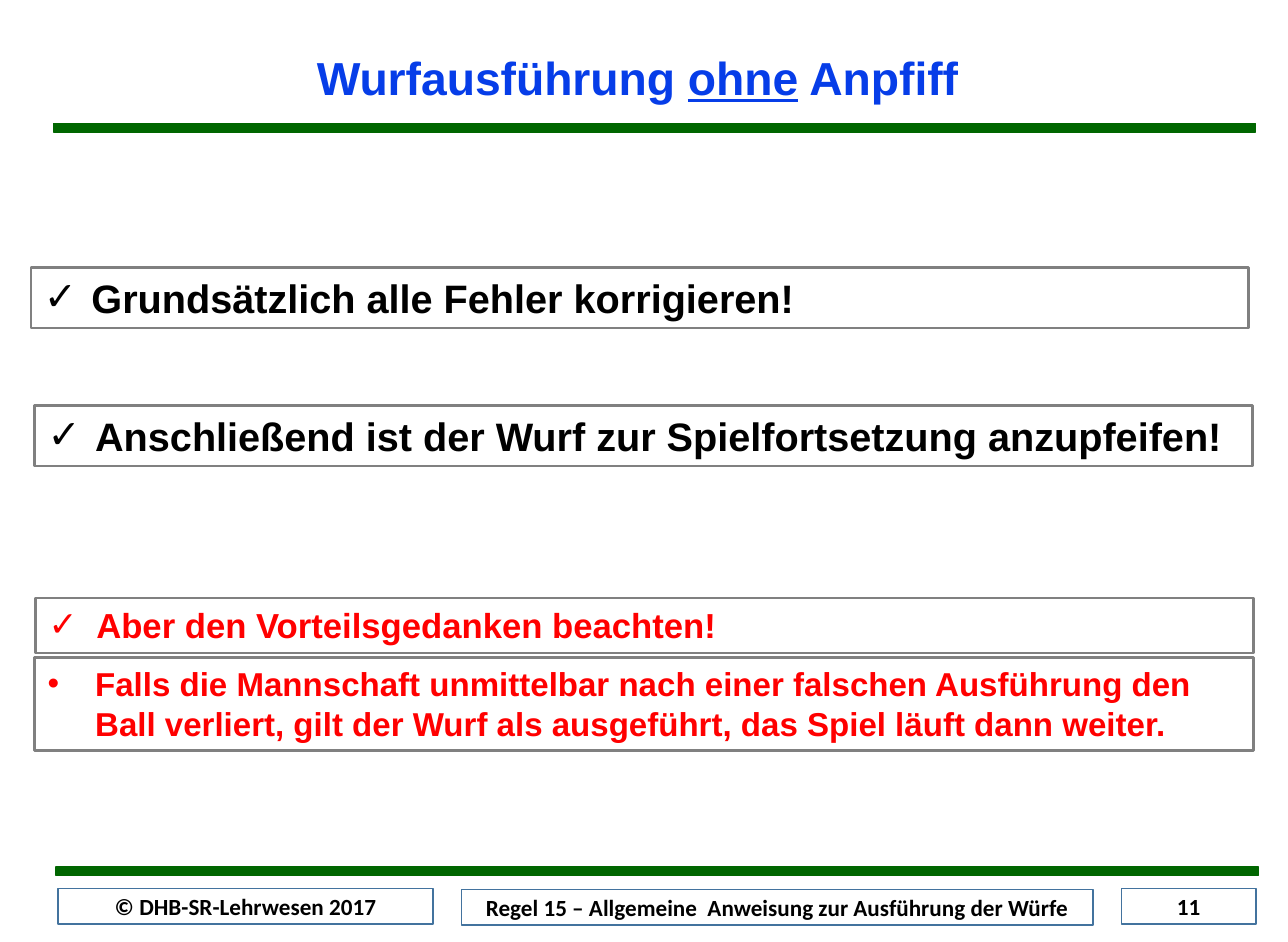
from lxml import etree
from pptx import Presentation
from pptx.dml.color import RGBColor
from pptx.enum import shapes, text
from pptx.oxml import ns
from pptx.util import Inches, Pt

# Content
TITLE = [("Wurfausführung ", False), ("ohne", True), (" Anpfiff", False)]
RULES = [  # left, top, width, height, bullet, wording, size, colour
    (0.26, 2.25, 10.24, 0.51, "✓", "Grundsätzlich alle Fehler korrigieren!", 24, "000000"),
    (0.29, 3.41, 10.24, 0.51, "✓",
     "Anschließend ist der Wurf zur Spielfortsetzung anzupfeifen!", 24, "000000"),
    (0.3, 5.03, 10.24, 0.46, "✓", "Aber den Vorteilsgedanken beachten!", 21, "FF0000"),
    (0.29, 5.53, 10.25, 0.78, "•",
     "Falls die Mannschaft unmittelbar nach einer falschen Ausführung den Ball verliert, "
     "gilt der Wurf als ausgeführt, das Spiel läuft dann weiter.", 20, "FF0000"),
]
FOOTER = [  # left, top, width, wording
    (0.49, 7.47, 3.15, "© DHB-SR-Lehrwesen 2017"),
    (3.88, 7.48, 5.31, "Regel 15 – Allgemeine  Anweisung zur Ausführung der Würfe"),
    (9.43, 7.47, 1.13, "11"),
]
BARS = [(0.45, 1.04), (0.47, 7.29)]
BAR_SIZE = (10.11, 0.07)
FOOTER_HEIGHT = 0.3
HANGING = 0.4

deck = Presentation()
deck.slide_width, deck.slide_height = Inches(10.83), Inches(7.92)
slide = deck.slides.add_slide(deck.slide_layouts[6])


def colour(hex_code):
    return RGBColor.from_string(hex_code)


def add_box(place, fill=None, line=None, weight=1):
    box = slide.shapes.add_shape(shapes.MSO_SHAPE.RECTANGLE, *map(Inches, place))
    box.shadow.inherit = False
    if fill:
        box.fill.solid()
        box.fill.fore_color.rgb = colour(fill)
    else:
        box.fill.background()
    if line:
        box.line.color.rgb = colour(line)
        box.line.width = Pt(weight)
    else:
        box.line.fill.background()
    return box


def set_frame(frame, anchor, side=0.1):
    frame.word_wrap = True
    frame.vertical_anchor = anchor
    frame.margin_left = frame.margin_right = Inches(side)
    frame.margin_top = frame.margin_bottom = Inches(0.05)
    return frame.paragraphs[0]


def add_run(paragraph, wording, size, font, hex_code, underline=False):
    run = paragraph.add_run()
    run.text = wording
    run.font.name, run.font.size, run.font.bold = font, Pt(size), True
    run.font.color.rgb = colour(hex_code)
    if underline:
        run.font.underline = True


def add_bullet(paragraph, symbol):
    props = paragraph._p.get_or_add_pPr()
    props.set("marL", str(Inches(HANGING)))
    props.set("indent", str(-Inches(HANGING)))
    etree.SubElement(props, ns.qn("a:buFont")).set("typeface", "Arial")
    etree.SubElement(props, ns.qn("a:buChar")).set("char", symbol)


# Green bars
for corner in BARS:
    add_box(corner + BAR_SIZE, fill="006600", line="006600", weight=0.75)

# Footer
for left, top, width, wording in FOOTER:
    field = add_box((left, top, width, FOOTER_HEIGHT), fill="FFFFFF", line="43739E")
    paragraph = set_frame(field.text_frame, text.MSO_ANCHOR.MIDDLE)
    paragraph.alignment = text.PP_ALIGN.CENTER
    add_run(paragraph, wording, 14, "Calibri", "000000")

# Title
title = slide.shapes.add_textbox(*map(Inches, (2.27, 0.42, 6.18, 0.53)))
paragraph = set_frame(title.text_frame, text.MSO_ANCHOR.TOP)
paragraph.alignment = text.PP_ALIGN.CENTER
paragraph.line_spacing = 0.9
for wording, underline in TITLE:
    add_run(paragraph, wording, 28, "Arial", "063DE8", underline)

# Rule boxes
for *place, symbol, wording, size, hex_code in RULES:
    rule = add_box(place, line="808080", weight=1.5)
    paragraph = set_frame(rule.text_frame, text.MSO_ANCHOR.TOP, side=0.11)
    rule.text_frame.auto_size = text.MSO_AUTO_SIZE.SHAPE_TO_FIT_TEXT
    paragraph.alignment = text.PP_ALIGN.LEFT
    add_bullet(paragraph, symbol)
    add_run(paragraph, wording, size, "Arial", hex_code)

deck.save("out.pptx")
